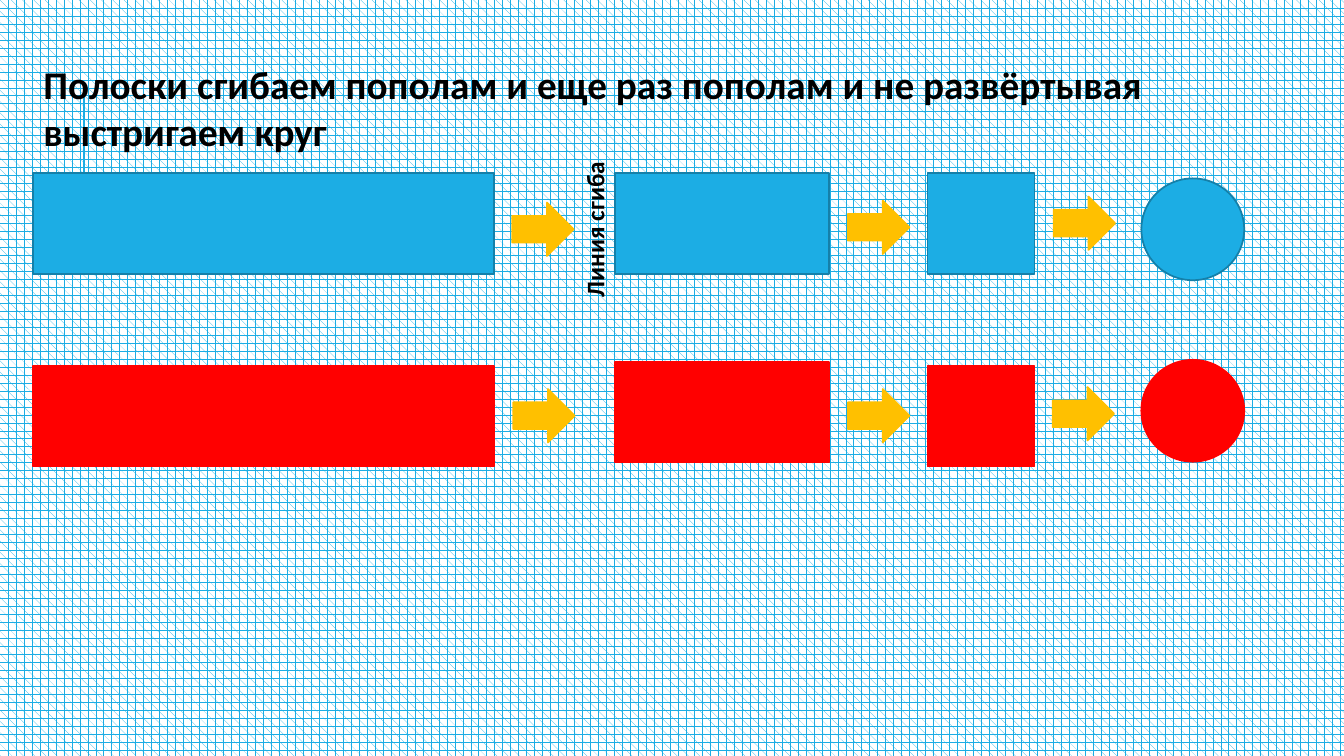
from dataclasses import dataclass

import pptx
import pptx.dml.color
import pptx.enum.dml
import pptx.enum.shapes
import pptx.enum.text
import pptx.oxml
import pptx.oxml.ns
import pptx.util

Inches = pptx.util.Inches
Pt = pptx.util.Pt
Preset = pptx.enum.shapes.MSO_SHAPE

BLUE = "1CADE4"
DARK_BLUE = "1580A9"
RED = "FF0000"
GOLD = "FFC000"
BLACK = "000000"
WHITE = "FFFFFF"


@dataclass(frozen=True)
class Stage:
    preset: Preset
    left: float
    width: float
    height: float


@dataclass(frozen=True)
class Strip:
    fill: str
    outline: str
    stage_tops: tuple[float, ...]
    arrow_lefts: tuple[float, ...]
    arrow_tops: tuple[float, ...]


STAGES = (
    Stage(Preset.RECTANGLE, 0.33, 4.57, 1),
    Stage(Preset.RECTANGLE, 6.1, 2.12, 1),
    Stage(Preset.RECTANGLE, 9.2, 1.06, 1),
    Stage(Preset.OVAL, 11.32, 1.02, 1.01),
)
STRIPS = (
    Strip(BLUE, DARK_BLUE, (1.72, 1.72, 1.72, 1.77), (5.08, 8.41, 10.45), (2.01, 1.99, 1.95)),
    Strip(RED, RED, (3.63, 3.59, 3.63, 3.57), (5.09, 8.41, 10.44), (3.86, 3.86, 3.84)),
)


def colour(value: str) -> pptx.dml.color.RGBColor:
    return pptx.dml.color.RGBColor.from_string(value)


def paint_background(slide) -> None:
    fill = slide.background.fill
    fill.patterned()
    fill.pattern = pptx.enum.dml.MSO_PATTERN.PLAID
    fill.fore_color.rgb = colour(BLUE)
    fill.back_color.rgb = colour(WHITE)


def write(frame, text: str, size: float, wrap: bool) -> None:
    frame.text = text
    frame.word_wrap = wrap
    frame.auto_size = pptx.enum.text.MSO_AUTO_SIZE.SHAPE_TO_FIT_TEXT
    frame.vertical_anchor = pptx.enum.text.MSO_ANCHOR.TOP
    paragraph = frame.paragraphs[0]
    paragraph.alignment = pptx.enum.text.PP_ALIGN.LEFT
    font = paragraph.runs[0].font
    font.name = "Calibri"
    font.size = Pt(size)
    font.bold = True
    font.color.rgb = colour(BLACK)


def draw_accent(slide) -> None:
    accent = slide.shapes.add_connector(
        pptx.enum.shapes.MSO_CONNECTOR.STRAIGHT,
        Inches(0.83), Inches(1.9), Inches(0.83), Inches(0.9),
    )
    accent.line.color.rgb = colour(BLUE)
    accent.line.width = Pt(1.5)
    properties = accent._element.spPr
    properties.append(pptx.oxml.parse_xml(f"<a:effectLst {pptx.oxml.ns.nsdecls('a')}/>"))
    slide.shapes._spTree.insert(2, accent._element)


def draw_shape(slide, stage: Stage, top: float, fill: str, outline: str) -> None:
    shape = slide.shapes.add_shape(
        stage.preset, Inches(stage.left), Inches(top), Inches(stage.width), Inches(stage.height)
    )
    shape.shadow.inherit = False
    shape.fill.solid()
    shape.fill.fore_color.rgb = colour(fill)
    shape.line.color.rgb = colour(outline)
    shape.line.width = Pt(1.25)


def draw_strip(slide, strip: Strip) -> None:
    for stage, top in zip(STAGES, strip.stage_tops):
        draw_shape(slide, stage, top, strip.fill, strip.outline)
    for left, top in zip(strip.arrow_lefts, strip.arrow_tops):
        draw_shape(slide, Stage(Preset.RIGHT_ARROW, left, 0.61, 0.53), top, GOLD, GOLD)


def main() -> None:
    presentation = pptx.Presentation()
    presentation.slide_width = Inches(13.33)
    presentation.slide_height = Inches(7.5)
    slide = presentation.slides.add_slide(presentation.slide_layouts[5])
    paint_background(slide)
    draw_accent(slide)

    instruction = slide.shapes.title
    instruction.left, instruction.top = Inches(0.33), Inches(0.55)
    instruction.width, instruction.height = Inches(12.79), Inches(1.04)
    write(
        instruction.text_frame,
        "Полоски сгибаем пополам и еще раз пополам и не развёртывая выстригаем круг",
        28,
        True,
    )

    for strip in STRIPS:
        draw_strip(slide, strip)

    fold_line = slide.shapes.add_textbox(Inches(5.12), Inches(2.07), Inches(1.55), Inches(0.4))
    fold_line.rotation = 270
    write(fold_line.text_frame, "Линия сгиба", 18, False)

    presentation.save("out.pptx")


if __name__ == "__main__":
    main()
